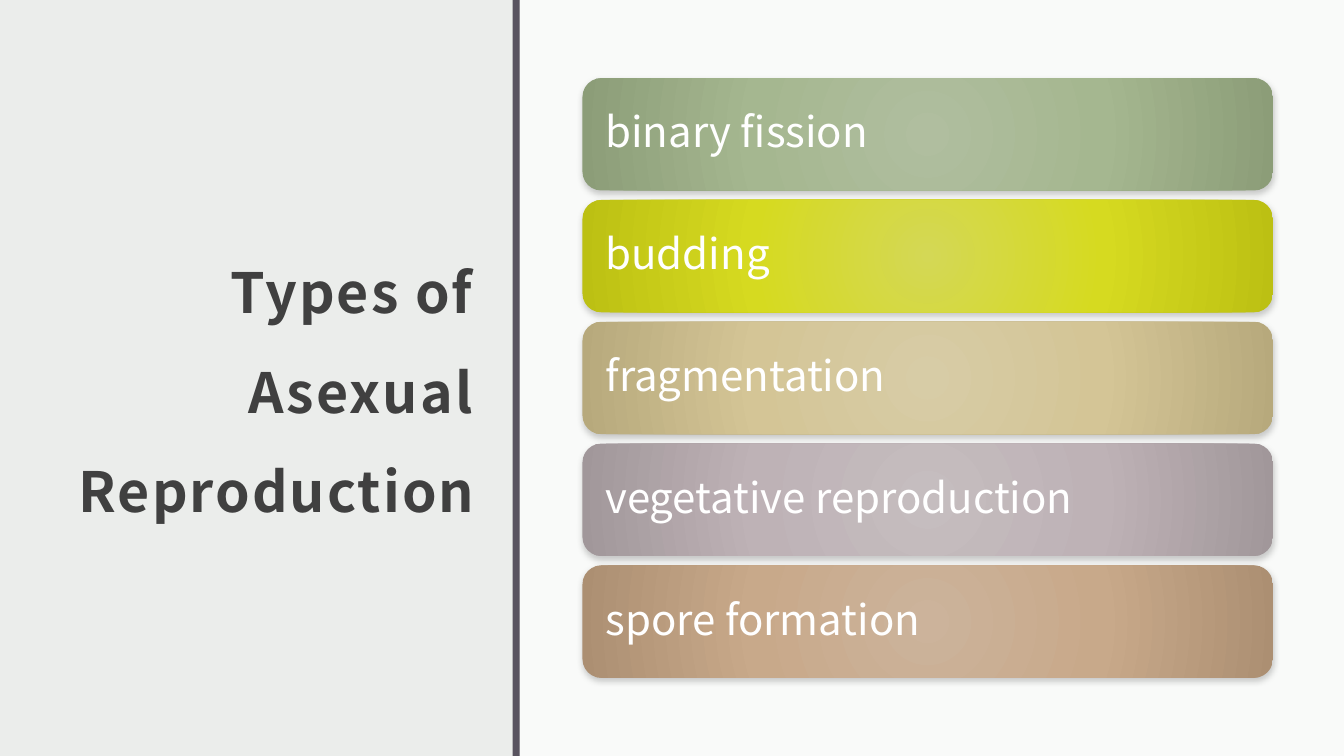
from lxml import etree
from pptx import Presentation
from pptx.dml.color import RGBColor
from pptx.enum import shapes, text
from pptx.oxml import parse_xml
from pptx.oxml.ns import nsdecls, qn
from pptx.util import Cm, Pt

FONT = "Noto Sans CJK JP"
WHITE = RGBColor(0xFF, 0xFF, 0xFF)
BACKGROUND = RGBColor(0xEB, 0xED, 0xEB)
DIVIDER = RGBColor(0x59, 0x54, 0x60)
TITLE = RGBColor(0x40, 0x40, 0x40)

# Label and gradient colours, centre to edge
TYPES = [
    ("binary fission", ("B0BE9F", "A5B790", "8C9D78")),
    ("budding", ("D4D855", "D6DA20", "BCC013")),
    ("fragmentation", ("D7CCA6", "D4C596", "B7A97C")),
    ("vegetative reproduction", ("C5BDBF", "BEB2B6", "A1979A")),
    ("spore formation", ("CCB39B", "C8A98A", "AC8F72")),
]


def add_panel(left, width, color):
    sp = slide.shapes.add_shape(shapes.MSO_SHAPE.RECTANGLE, Cm(left), 0, Cm(width), prs.slide_height)
    sp.shadow.inherit = False
    sp.fill.solid()
    sp.fill.fore_color.rgb = color
    sp.line.fill.background()
    return sp


def write(sp, words, size, color, align, spacing, inset):
    tf = sp.text_frame
    tf.word_wrap = True
    tf.vertical_anchor = text.MSO_ANCHOR.MIDDLE
    tf.margin_left = tf.margin_right = Cm(inset)
    tf.margin_top = tf.margin_bottom = Cm(0.3)
    p = tf.paragraphs[0]
    r = p.add_run()
    r.text = words
    p.alignment = align
    p.line_spacing = spacing
    p.font.name = FONT
    p.font.size = Pt(size)
    p.font.color.rgb = color
    return p


prs = Presentation()
prs.slide_width, prs.slide_height = Cm(33.87), Cm(19.05)
slide = prs.slides.add_slide(prs.slide_layouts[6])
slide.background.fill.solid()
slide.background.fill.fore_color.rgb = BACKGROUND

# Translucent right panel and divider
panel = add_panel(13.1, 20.77, WHITE)
color = panel.fill._xPr.find(".//" + qn("a:srgbClr"))
etree.SubElement(color, qn("a:alpha"), val="75000")
add_panel(12.92, 0.18, DIVIDER)

# Title
box = slide.shapes.add_textbox(Cm(0.51), Cm(5.74), Cm(11.76), Cm(7.39))
p = write(box, "Types of Asexual Reproduction", 39.6, TITLE, text.PP_ALIGN.RIGHT, 1.5, 0.3)
p.font.bold = True
p.runs[0]._r.get_or_add_rPr().set("spc", "150")

# Bars, one per type
for i, (label, colors) in enumerate(TYPES):
    sp = slide.shapes.add_shape(
        shapes.MSO_SHAPE.ROUNDED_RECTANGLE, Cm(14.68), Cm(1.97 + 3.07 * i), Cm(17.4), Cm(2.83))
    sp.line.fill.background()
    write(sp, label, 30, WHITE, text.PP_ALIGN.LEFT, 0.9, 0.44)

    # Radial gradient and soft shadow below
    stops = "".join(
        f'<a:gs pos="{50000 * n}"><a:srgbClr val="{c}"/></a:gs>' for n, c in enumerate(colors))
    spPr = sp._element.spPr
    spPr.find(qn("a:prstGeom")).addnext(parse_xml(
        f'<a:gradFill {nsdecls("a")}><a:gsLst>{stops}</a:gsLst><a:path path="circle">'
        '<a:fillToRect l="100000" t="100000" r="100000" b="100000"/></a:path></a:gradFill>'))
    spPr.append(parse_xml(
        f'<a:effectLst {nsdecls("a")}><a:outerShdw blurRad="57150" dist="25400" dir="5400000" '
        'algn="ctr" rotWithShape="0"><a:srgbClr val="000000"><a:alpha val="20000"/></a:srgbClr>'
        '</a:outerShdw></a:effectLst>'))

prs.save("out.pptx")
